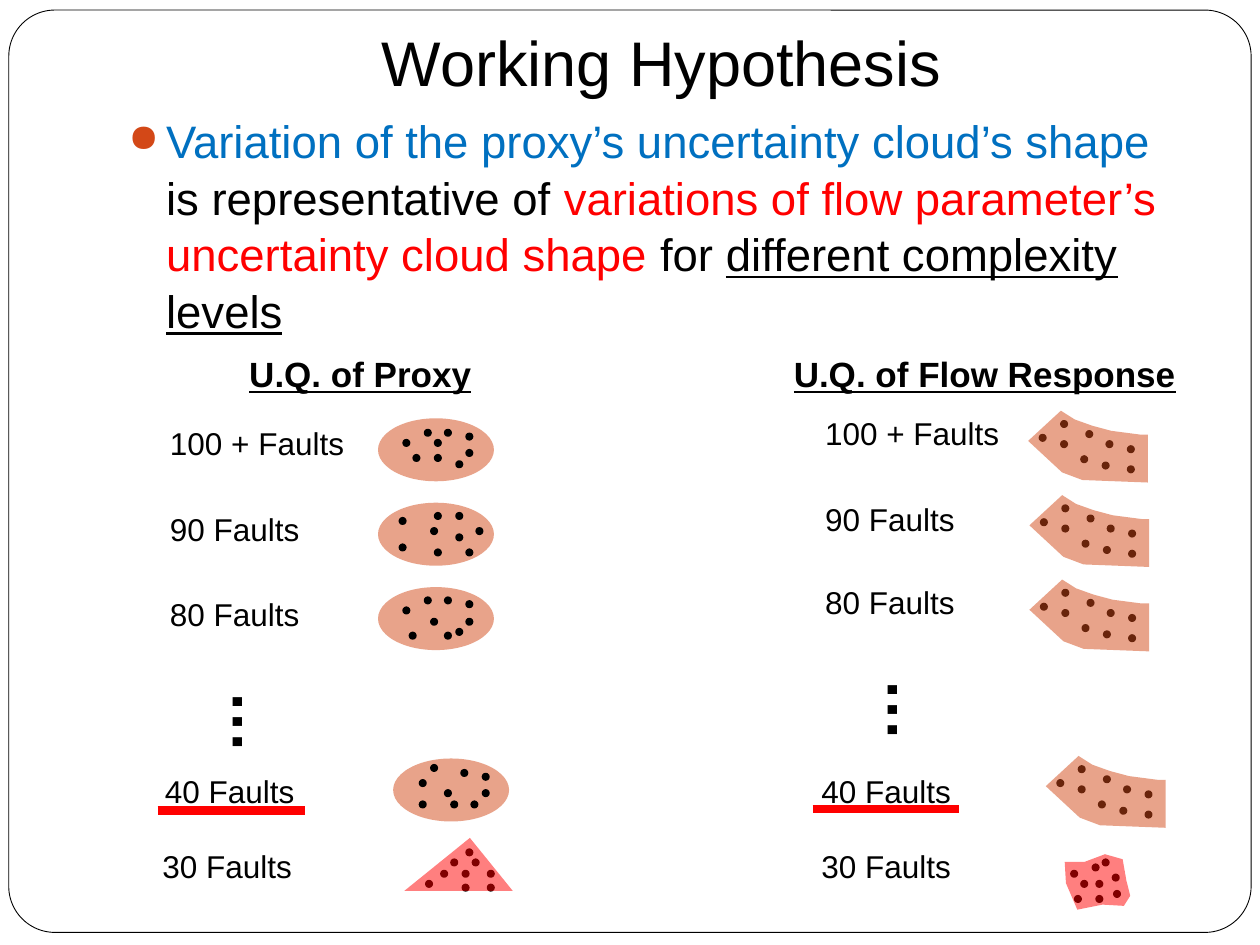
"""Build the Working Hypothesis slide comparing proxy and flow uncertainty clouds."""
import lxml.etree
import pptx
import pptx.dml.color
import pptx.enum.shapes
import pptx.enum.text
import pptx.oxml.ns
import pptx.util

PX = 9144
COLORS = {
    "black": "000000",
    "white": "FFFFFF",
    "blue": "0070C0",
    "red": "FF0000",
    "rust": "D34817",
}
SHAPES = pptx.enum.shapes.MSO_SHAPE
ALIGN = pptx.enum.text.PP_ALIGN
ANCHOR = pptx.enum.text.MSO_ANCHOR
qn = pptx.oxml.ns.qn


def add_text(spans, left, top, width, height, size=18, bold=False, underline=False,
             align=ALIGN.LEFT, anchor=ANCHOR.TOP, rotation=0):
    if isinstance(spans, str):
        spans = [(spans, "black", underline)]
    box = page.shapes.add_textbox(left * PX, top * PX, width * PX, height * PX)
    box.rotation = rotation
    frame = box.text_frame
    frame.word_wrap = True
    frame.vertical_anchor = anchor
    para = frame.paragraphs[0]
    para.alignment = align
    for text, color, underlined in spans:
        span = para.add_run()
        span.text = text
        span.font.name = "Arial"
        span.font.size = pptx.util.Pt(size)
        span.font.bold = bold
        span.font.underline = underlined
        span.font.color.rgb = pptx.dml.color.RGBColor.from_string(COLORS[color])
    return box


def paint(shape, fill, line_width=0, opacity=100):
    shape.shadow.inherit = False
    shape.fill.solid()
    shape.fill.fore_color.rgb = pptx.dml.color.RGBColor.from_string(COLORS[fill])
    if opacity < 100:
        color = shape._element.spPr.find(qn("a:solidFill"))[0]
        lxml.etree.SubElement(color, qn("a:alpha"), val=str(opacity * 1000))
    if line_width:
        shape.line.color.rgb = pptx.dml.color.RGBColor.from_string(COLORS["black"])
        shape.line.width = pptx.util.Pt(line_width)
    else:
        shape.line.fill.background()


deck = pptx.Presentation()
deck.slide_width = 1000 * PX
deck.slide_height = 750 * PX
page = deck.slides.add_slide(deck.slide_layouts[6])

border = page.shapes.add_shape(SHAPES.ROUNDED_RECTANGLE, 7 * PX, 8 * PX, 986 * PX, 732 * PX)
border.adjustments[0] = 0.05
paint(border, "white", line_width=0.5)

title = add_text("Working Hypothesis", 100, 17, 850, 72, size=36,
                 align=ALIGN.CENTER, anchor=ANCHOR.BOTTOM)
title.text_frame.margin_bottom = 10 * PX

hypothesis = add_text([
    ("Variation of the proxy’s uncertainty cloud’s shape ", "blue", False),
    ("is representative of ", "black", False),
    ("variations of flow parameter’s uncertainty cloud shape", "red", False),
    (" for ", "black", False),
    ("different complexity levels", "black", True),
], 92, 83, 850, 558, size=26)
para = hypothesis.text_frame.paragraphs[0]
para.line_spacing = 1.04
props = para._p.get_or_add_pPr()
props.set("marL", str(30 * PX))
props.set("indent", str(-30 * PX))
bullet_color = lxml.etree.SubElement(props, qn("a:buClr"))
lxml.etree.SubElement(bullet_color, qn("a:srgbClr"), val=COLORS["rust"])
lxml.etree.SubElement(props, qn("a:buSzPct"), val="85000")
lxml.etree.SubElement(props, qn("a:buChar"), char="●")

for heading, left, width in [("U.Q. of Proxy", 138, 296), ("U.Q. of Flow Response", 617, 329)]:
    add_text(heading, left, 275, width, 44, size=20, bold=True, underline=True,
             align=ALIGN.CENTER)

fault_counts = ["100 +", "90", "80", "40", "30"]
label_columns = [
    [(125, 332), (125, 400), (125, 467), (121, 608), (119, 667)],
    [(645, 324), (645, 392), (645, 458), (642, 608), (642, 667)],
]
for corners in label_columns:
    for count, (left, top) in zip(fault_counts, corners):
        add_text(f"{count} Faults", left, top, 158, 40)

for left, top in [(94, 493), (614, 484)]:
    add_text("…", left, top, 158, 71, size=36, bold=True, rotation=270)

proxy_clouds = [
    (300, 332, [(20, 17), (37, 9), (53, 9), (70, 12), (28, 29), (45, 29), (62, 34),
                (70, 25), (45, 17)]),
    (300, 399, [(17, 12), (45, 8), (62, 8), (78, 20), (17, 33), (45, 37), (62, 25),
                (70, 37), (42, 20)]),
    (300, 466, [(20, 16), (37, 8), (53, 8), (70, 11), (25, 36), (53, 36), (62, 33),
                (70, 25), (42, 25)]),
    (312, 602, [(21, 17), (30, 5), (54, 9), (71, 12), (21, 34), (46, 34), (62, 34),
                (71, 25), (41, 25)]),
]
flow_outline = [(0, 24), (26, 0), (37, 7), (51, 12), (66, 16), (89, 19), (95, 19),
                (95, 57), (43, 55), (27, 49)]
flow_dots = [(26, 8), (46, 16), (9, 19), (79, 44), (26, 24), (42, 36), (59, 41),
             (79, 28), (62, 24)]
triangle_outline = [(0, 42), (52, 0), (86, 42)]
triangle_dots = [(46, 37), (66, 37), (49, 9), (54, 17), (17, 34), (29, 26), (46, 26),
                 (66, 26), (37, 17)]
blob_outline = [(10, 44), (1, 23), (0, 6), (16, 6), (32, 0), (46, 4), (49, 21),
                (52, 33), (47, 41), (30, 40)]
blob_dots = [(5, 13), (22, 8), (8, 33), (30, 4), (25, 33), (25, 21), (39, 29),
             (13, 21), (38, 16)]

clouds = [(left, top, None, dots, "rust") for left, top, dots in proxy_clouds]
clouds.append((321, 665, triangle_outline, triangle_dots, "red"))
for left, top in [(816, 326), (817, 393), (817, 460), (830, 600)]:
    clouds.append((left, top, flow_outline, flow_dots, "rust"))
clouds.append((845, 678, blob_outline, blob_dots, "red"))

for left, top, outline, dots, color in clouds:
    if outline is None:
        cloud = page.shapes.add_shape(SHAPES.OVAL, left * PX, top * PX, 92 * PX, 50 * PX)
        paint(cloud, color, opacity=50)
    for x, y in dots:
        dot = page.shapes.add_shape(SHAPES.OVAL, (left + x) * PX, (top + y) * PX, 5 * PX, 5 * PX)
        paint(dot, "black", line_width=1)
    if outline:
        points = [(left + x, top + y) for x, y in outline]
        builder = page.shapes.build_freeform(*points[0], scale=PX)
        builder.add_line_segments(points[1:], close=True)
        paint(builder.convert_to_shape(), color, opacity=50)

for left, right, y in [(125, 242, 643), (645, 761, 642)]:
    rule = page.shapes.add_connector(pptx.enum.shapes.MSO_CONNECTOR.STRAIGHT,
                                     left * PX, y * PX, right * PX, y * PX)
    rule.line.color.rgb = pptx.dml.color.RGBColor.from_string(COLORS["red"])
    rule.line.width = pptx.util.Pt(5)
    lxml.etree.SubElement(rule._element.spPr, qn("a:effectLst"))

deck.save("out.pptx")
